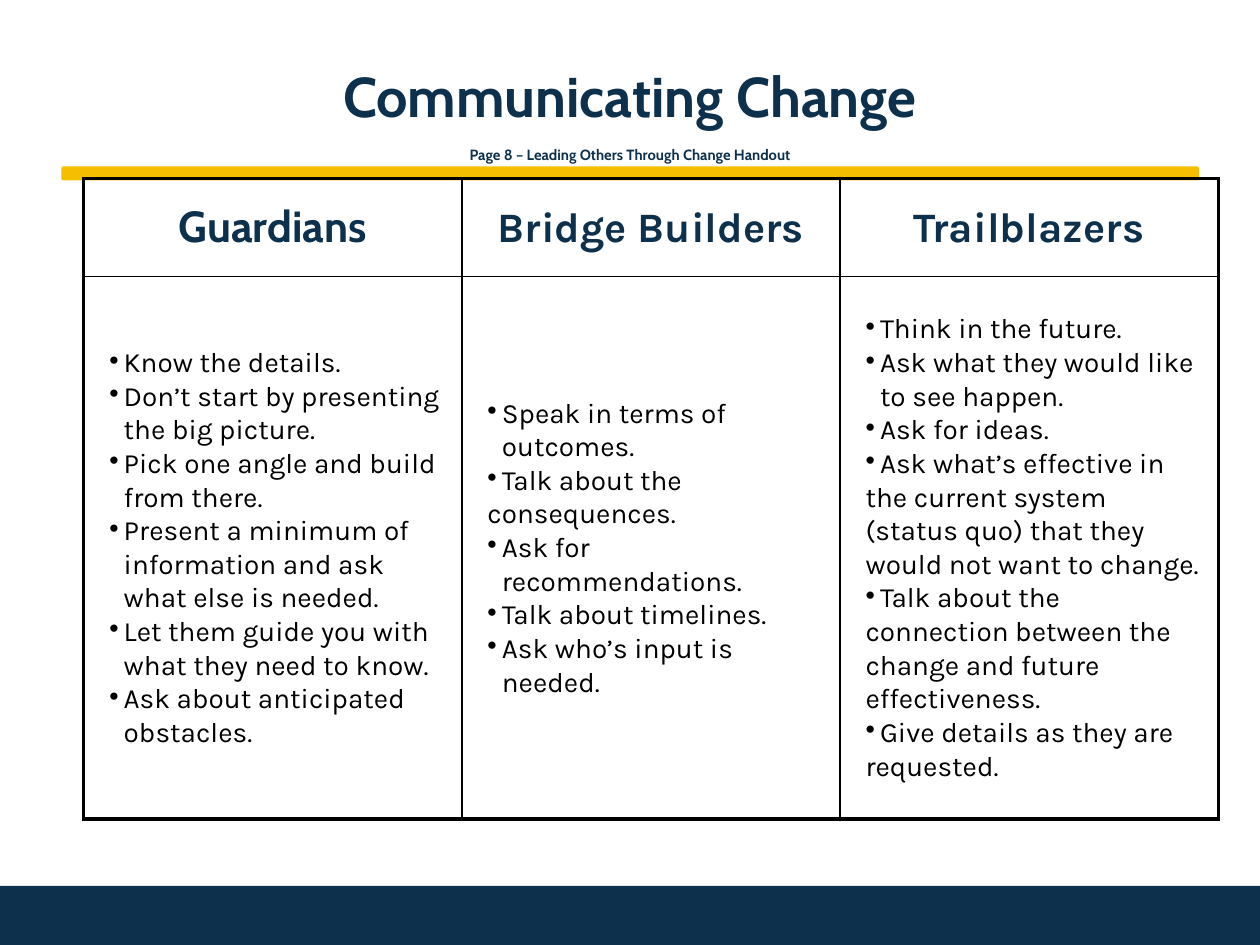
from lxml import etree
from pptx import Presentation
from pptx.dml.color import RGBColor
from pptx.enum.shapes import MSO_SHAPE
from pptx.enum.text import MSO_ANCHOR, MSO_AUTO_SIZE, PP_ALIGN
from pptx.oxml.ns import qn
from pptx.util import Cm, Pt

NAVY, GOLD, BLACK = "0D314C", "F6BE00", "000000"
HEADING_FONT, BODY_FONT = "Cabin", "Karla"
SLIDE_WIDTH, SLIDE_HEIGHT = 27.09, 20.32
COLUMN_WIDTH, ROW_HEIGHTS = 8.13, (2.11, 11.66)
CELL_MARGIN = 0.25
OUTER_LINE, INNER_LINE = 2.25, 1

# Header, font, size, line spacing, and the lines below it.
# Each bullet is a tuple; its later entries are separate lines without a bullet.
COLUMNS = [
    ("Guardians", HEADING_FONT, 26.5, 31.9, [
        ("Know the details.",),
        ("Don’t start by presenting the big picture.",),
        ("Pick one angle and build from there.",),
        ("Present a minimum of information and ask what else is needed.",),
        ("Let them guide you with what they need to know.",),
        ("Ask about anticipated obstacles.",),
    ]),
    ("Bridge Builders", BODY_FONT, 25.5, 30.7, [
        ("Speak in terms of outcomes.",),
        ("Talk about the", "consequences."),
        ("Ask for recommendations.",),
        ("Talk about timelines.",),
        ("Ask who’s input is needed.",),
    ]),
    ("Trailblazers", BODY_FONT, 25.5, 30.7, [
        ("Think in the future.",),
        ("Ask what they would like to see happen.",),
        ("Ask for ideas.",),
        ("Ask what’s effective in", "the current system",
         "(status quo) that they", "would not want to change."),
        ("Talk about the", "connection between the",
         "change and future", "effectiveness."),
        ("Give details as they are", "requested."),
    ]),
]


def color(hex_string):
    return RGBColor.from_string(hex_string)


def format_paragraph(paragraph, font_name, size, line_spacing, hex_string=NAVY,
                     bold=True, alignment=PP_ALIGN.CENTER):
    paragraph.alignment = alignment
    paragraph.line_spacing = Pt(line_spacing)
    paragraph.space_before = paragraph.space_after = Pt(0)
    font = paragraph.font
    font.name, font.size, font.bold = font_name, Pt(size), bold
    font.color.rgb = color(hex_string)


def set_bullet(paragraph, visible):
    """Give a hanging indent, with or without the bullet sign."""
    properties = paragraph._p.get_or_add_pPr()
    properties.set("marL", str(Cm(0.61)))
    properties.set("indent", str(-Cm(0.31)))
    if visible:
        etree.SubElement(properties, qn("a:buChar")).set("char", "•")
    else:
        etree.SubElement(properties, qn("a:buNone"))


def set_borders(cell, widths):
    """Draw black borders; widths are in the order left, right, top, bottom."""
    properties = cell._tc.get_or_add_tcPr()
    for position, (side, width) in enumerate(zip("LRTB", widths)):
        line = etree.Element(qn(f"a:ln{side}"), w=str(Pt(width)))
        fill = etree.SubElement(line, qn("a:solidFill"))
        etree.SubElement(fill, qn("a:srgbClr")).set("val", BLACK)
        properties.insert(position, line)


def add_block(slide, shape_type, left, top, width, height, hex_string):
    shape = slide.shapes.add_shape(
        shape_type, Cm(left), Cm(top), Cm(width), Cm(height))
    shape.shadow.inherit = False
    shape.fill.solid()
    shape.fill.fore_color.rgb = color(hex_string)
    shape.line.fill.background()
    return shape


def fill_text_frame(shape, text, size, line_spacing, anchor):
    frame = shape.text_frame
    frame.word_wrap = True
    frame.auto_size = MSO_AUTO_SIZE.NONE
    frame.vertical_anchor = anchor
    frame.margin_left = frame.margin_right = Cm(0)
    frame.margin_top = frame.margin_bottom = Cm(0)
    frame.text = text
    format_paragraph(frame.paragraphs[0], HEADING_FONT, size, line_spacing)


def add_title(slide):
    title = slide.shapes.title
    title.left, title.top = Cm(4.32), Cm(1.09)
    title.width, title.height = Cm(18.44), Cm(1.93)
    fill_text_frame(title, "Communicating Change", 34.1, 41, MSO_ANCHOR.MIDDLE)


def add_subtitle(slide):
    box = slide.shapes.add_textbox(Cm(1.78), Cm(1.9), Cm(23.52), Cm(0.18))
    fill_text_frame(box, "Page 8 – Leading Others Through Change Handout",
                    9, 46.1, MSO_ANCHOR.TOP)


def fill_list_cell(cell, bullets):
    lines = [(text, index == 0)
             for bullet in bullets for index, text in enumerate(bullet)]
    frame = cell.text_frame
    for number, (text, has_bullet) in enumerate(lines):
        paragraph = frame.add_paragraph() if number else frame.paragraphs[0]
        paragraph.text = text
        paragraph.level = 1
        set_bullet(paragraph, has_bullet)
        format_paragraph(paragraph, BODY_FONT, 17, 20.5, BLACK,
                         bold=False, alignment=PP_ALIGN.LEFT)


def add_audience_table(slide):
    last_column, last_row = len(COLUMNS) - 1, len(ROW_HEIGHTS) - 1
    table = slide.shapes.add_table(
        len(ROW_HEIGHTS), len(COLUMNS), Cm(1.8), Cm(3.84),
        Cm(COLUMN_WIDTH * len(COLUMNS)), Cm(sum(ROW_HEIGHTS))).table
    table.first_row = table.horz_banding = False
    for row, height in zip(table.rows, ROW_HEIGHTS):
        row.height = Cm(height)

    for column, (header, font_name, size, spacing, bullets) in enumerate(COLUMNS):
        table.columns[column].width = Cm(COLUMN_WIDTH)
        header_cell = table.cell(0, column)
        header_cell.text = header
        format_paragraph(header_cell.text_frame.paragraphs[0],
                         font_name, size, spacing)
        fill_list_cell(table.cell(1, column), bullets)

        for row in range(len(ROW_HEIGHTS)):
            cell = table.cell(row, column)
            cell.fill.background()
            cell.vertical_anchor = MSO_ANCHOR.MIDDLE
            cell.margin_left = cell.margin_right = Cm(CELL_MARGIN)
            cell.margin_top = cell.margin_bottom = Cm(CELL_MARGIN)
            outer_sides = (column == 0, column == last_column,
                           row == 0, row == last_row)
            set_borders(cell, [OUTER_LINE if outer else INNER_LINE
                               for outer in outer_sides])


def main():
    presentation = Presentation()
    presentation.slide_width = Cm(SLIDE_WIDTH)
    presentation.slide_height = Cm(SLIDE_HEIGHT)
    slide = presentation.slides.add_slide(presentation.slide_layouts[5])

    rule = add_block(slide, MSO_SHAPE.ROUNDED_RECTANGLE,
                     1.32, 3.58, 24.46, 0.3, GOLD)
    rule.adjustments[0] = 0.15
    add_title(slide)
    add_audience_table(slide)
    add_block(slide, MSO_SHAPE.RECTANGLE, 0, 19.05, SLIDE_WIDTH, 1.27, NAVY)
    add_subtitle(slide)
    presentation.save("out.pptx")


if __name__ == "__main__":
    main()
